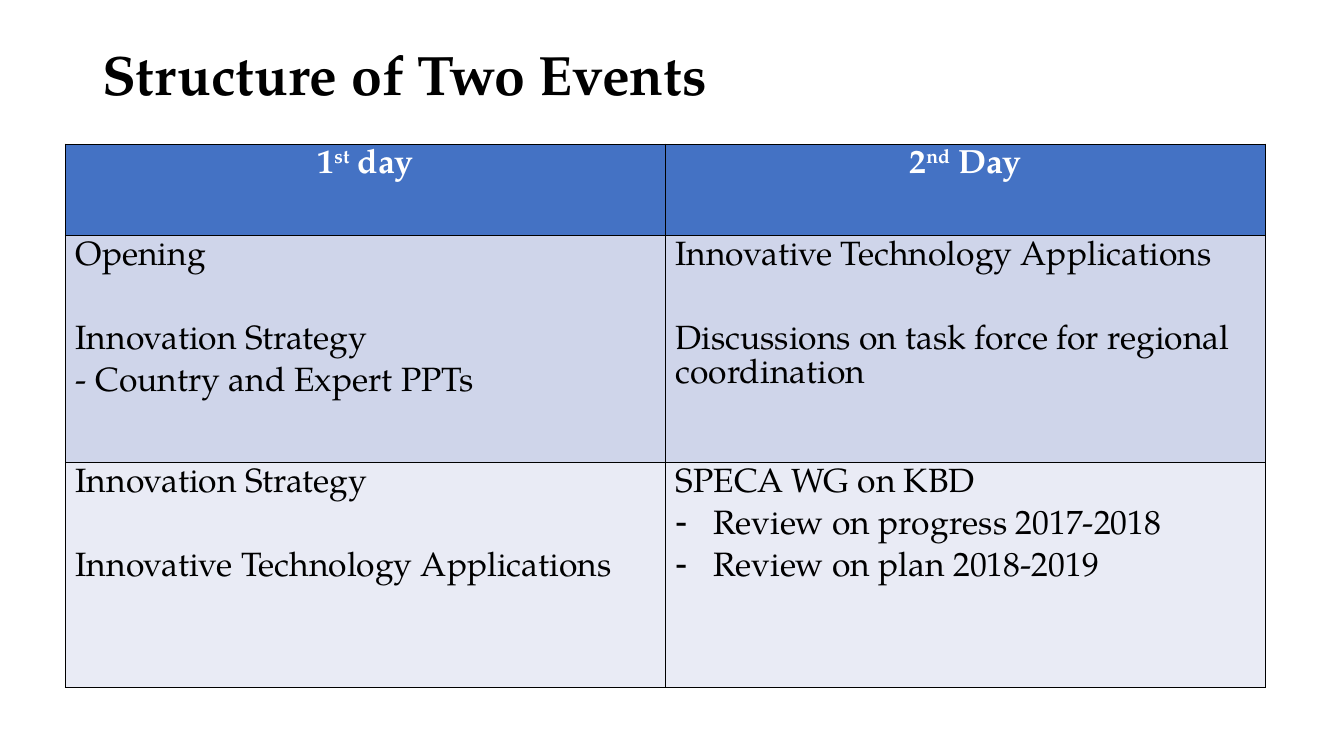
from dataclasses import dataclass

from lxml import etree
from pptx import Presentation
from pptx import util as u
from pptx.dml.color import RGBColor
from pptx.enum import text
from pptx.oxml import ns


@dataclass(frozen=True)
class Theme:
    font: str = "TeX Gyre Pagella"
    ink: str = "000000"
    header_ink: str = "FFFFFF"
    header_fill: str = "4472C4"
    body_fills: tuple = ("CFD5EA", "E9EBF5")
    title_size: float = 39.6
    table_size: float = 24
    border: float = 1
    line_gap: float = 6
    block_gap: float = 36
    bullet_indent: float = 0.38


THEME = Theme()
PLAIN, BLOCK, BULLET = range(3)
HEADERS = [("1", "st", " day"), ("2", "nd", " Day")]
SESSIONS = [
    [
        [("Opening", PLAIN), ("Innovation Strategy", BLOCK),
         ("- Country and Expert PPTs", PLAIN)],
        [("Innovative Technology Applications", PLAIN),
         ("Discussions on task force for regional coordination", BLOCK)],
    ],
    [
        [("Innovation Strategy", PLAIN),
         ("Innovative Technology Applications", BLOCK)],
        [("SPECA WG on KBD", PLAIN), ("Review on progress 2017-2018", BULLET),
         ("Review on plan 2018-2019", BULLET)],
    ],
]
ROW_HEIGHTS = (0.91, 2.25, 2.23)


def format_runs(para, size, color, bold):
    for span in para.runs:
        span.font.name = THEME.font
        span.font.size = u.Pt(size)
        span.font.bold = bold
        span.font.color.rgb = RGBColor.from_string(color)


def add_bullet(para):
    properties = para._p.get_or_add_pPr()
    indent = u.Inches(THEME.bullet_indent)
    properties.set("marL", str(indent))
    properties.set("indent", str(-indent))
    etree.SubElement(properties, ns.qn("a:buChar")).set("char", "-")


def style_cell(cell, fill):
    properties = cell._tc.get_or_add_tcPr()
    for side in ("a:lnL", "a:lnR", "a:lnT", "a:lnB"):
        line = etree.SubElement(properties, ns.qn(side))
        line.set("w", str(u.Pt(THEME.border)))
        solid = etree.SubElement(line, ns.qn("a:solidFill"))
        etree.SubElement(solid, ns.qn("a:srgbClr")).set("val", THEME.ink)
    cell.fill.solid()
    cell.fill.fore_color.rgb = RGBColor.from_string(fill)


def fill_header(cell, parts):
    style_cell(cell, THEME.header_fill)
    para = cell.text_frame.paragraphs[0]
    para.alignment = text.PP_ALIGN.CENTER
    for part in parts:
        para.add_run().text = part
    format_runs(para, THEME.table_size, THEME.header_ink, True)
    para.runs[1]._r.get_or_add_rPr().set("baseline", "30000")


def fill_session(cell, lines, fill):
    style_cell(cell, fill)
    frame = cell.text_frame
    frame.text = "\n".join(words for words, kind in lines)
    for para, (words, kind) in zip(frame.paragraphs, lines):
        gap = THEME.block_gap if kind == BLOCK else THEME.line_gap
        para.space_before = u.Pt(gap)
        if kind == BULLET:
            add_bullet(para)
        format_runs(para, THEME.table_size, THEME.ink, False)


def place_title(page, box):
    title = page.shapes.title
    title.left, title.top, title.width, title.height = map(u.Inches, box)
    frame = title.text_frame
    frame.text = "Structure of Two Events"
    frame.word_wrap = True
    frame.auto_size = text.MSO_AUTO_SIZE.NONE
    frame.vertical_anchor = text.MSO_ANCHOR.MIDDLE
    para = frame.paragraphs[0]
    para.alignment = text.PP_ALIGN.LEFT
    para.line_spacing = 0.9
    format_runs(para, THEME.title_size, THEME.ink, True)


def place_schedule(page, box):
    table = page.shapes.add_table(
        len(ROW_HEIGHTS), len(HEADERS), *map(u.Inches, box)).table
    for row, height in zip(table.rows, ROW_HEIGHTS):
        row.height = u.Inches(height)
    for column, parts in enumerate(HEADERS):
        fill_header(table.cell(0, column), parts)
    for row, (sessions, fill) in enumerate(zip(SESSIONS, THEME.body_fills), 1):
        for column, lines in enumerate(sessions):
            fill_session(table.cell(row, column), lines, fill)


def main():
    deck = Presentation()
    deck.slide_width = u.Inches(13.33)
    deck.slide_height = u.Inches(7.5)
    page = deck.slides.add_slide(deck.slide_layouts.get_by_name("Title Only"))
    place_title(page, (0.92, 0.4, 11.5, 0.73))
    place_schedule(page, (0.65, 1.43, 11.9, sum(ROW_HEIGHTS)))
    deck.save("out.pptx")


if __name__ == "__main__":
    main()
